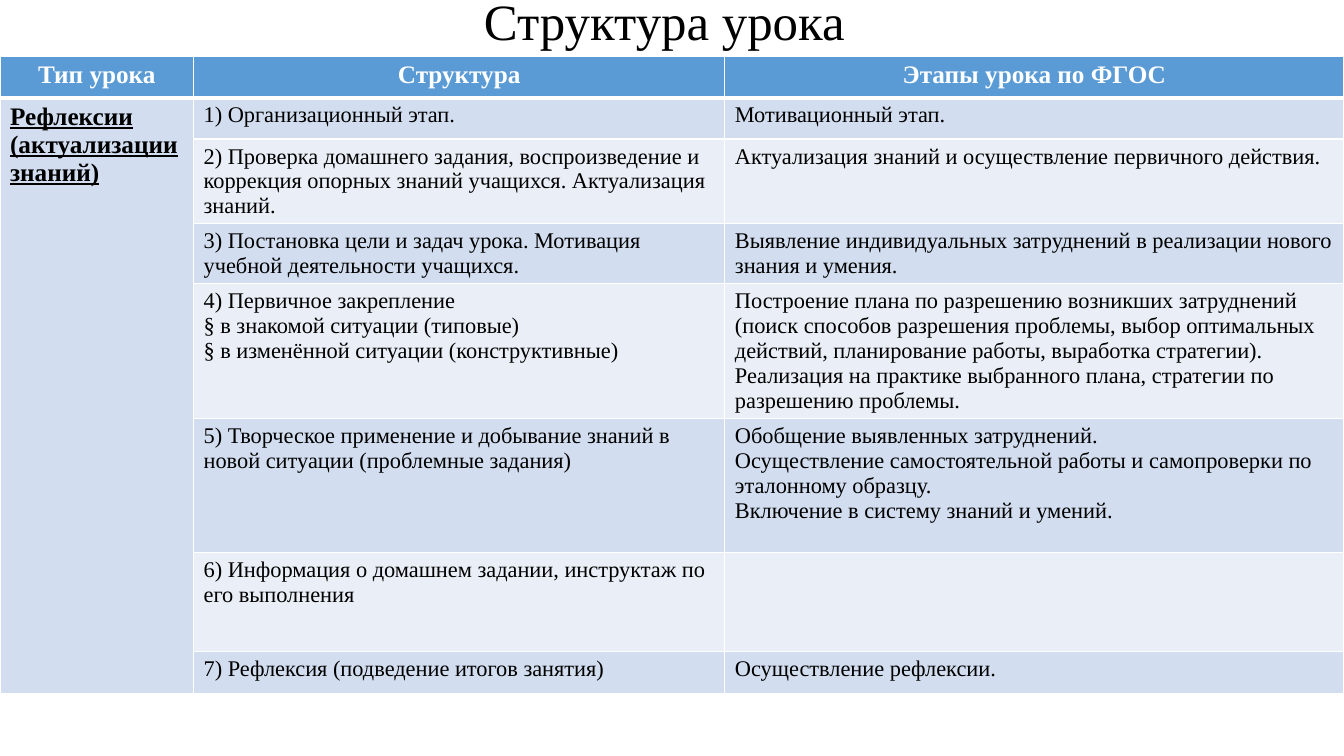
from dataclasses import dataclass

from lxml.etree import SubElement
from pptx import Presentation
from pptx.dml.color import RGBColor
from pptx.enum.text import MSO_ANCHOR as Anchor, PP_ALIGN as Align
from pptx.oxml.ns import qn
from pptx.util import Emu, Pt

PX = 9144  # 100 px to the inch


@dataclass(frozen=True)
class Theme:
    font: str = "Times New Roman"
    ink: str = "000000"
    paper: str = "FFFFFF"
    header: str = "5B9BD5"
    bands: tuple = ("D2DEEF", "EAEFF7")
    title_size: float = 36.3
    heading_size: int = 18
    body_size: int = 16
    rule: int = 1
    header_rule: int = 3


HEADINGS = ("Тип урока", "Структура", "Этапы урока по ФГОС")
LESSON_TYPE = "Рефлексии (актуализации знаний)"
STAGES = (
    ("1) Организационный этап.", "Мотивационный этап."),
    ("2) Проверка домашнего задания, воспроизведение и коррекция опорных "
     "знаний учащихся. Актуализация знаний.",
     "Актуализация знаний и осуществление первичного действия."),
    ("3) Постановка цели и задач урока. Мотивация учебной деятельности учащихся.",
     "Выявление индивидуальных затруднений в реализации нового знания и умения."),
    ("4) Первичное закрепление\n"
     "§ в знакомой ситуации (типовые)\n"
     "§ в изменённой ситуации (конструктивные)",
     "Построение плана по разрешению возникших затруднений (поиск способов "
     "разрешения проблемы, выбор оптимальных действий, планирование работы, "
     "выработка стратегии).\n"
     "Реализация на практике выбранного плана, стратегии по разрешению проблемы."),
    ("5) Творческое применение и добывание знаний в новой ситуации "
     "(проблемные задания)",
     "Обобщение выявленных затруднений.\n"
     "Осуществление самостоятельной работы и самопроверки по эталонному образцу.\n"
     "Включение в систему знаний и умений."),
    ("6) Информация о домашнем задании, инструктаж по его выполнения", ""),
    ("7) Рефлексия (подведение итогов занятия)", "Осуществление рефлексии."),
)
COLUMN_WIDTHS = (192, 527, 614)
ROW_HEIGHTS = (41, 41, 83, 59, 134, 133, 98, 42)


class SlideBuilder:
    def __init__(self, slide, theme):
        self.slide = slide
        self.theme = theme

    def set_text(self, frame, text, size, color, bold=False, underline=False,
                 align=Align.LEFT, spacing=None):
        frame.text = text
        for paragraph in frame.paragraphs:
            paragraph.alignment = align
            paragraph.line_spacing = spacing
            for run in paragraph.runs:
                font = run.font
                font.name, font.size = self.theme.font, Pt(size)
                font.bold, font.underline = bold, underline
                font.color.rgb = RGBColor.from_string(color)

    def title(self, text, left, top, width, height):
        box = self.slide.shapes.add_textbox(*(Emu(n * PX) for n in (left, top, width, height)))
        frame = box.text_frame
        frame.word_wrap = True
        frame.vertical_anchor = Anchor.MIDDLE
        self.set_text(frame, text, self.theme.title_size, self.theme.ink,
                      align=Align.CENTER, spacing=0.7)

    def table(self, left, top, widths, heights):
        bounds = (left, top, sum(widths), sum(heights))
        grid = self.slide.shapes.add_table(
            len(heights), len(widths), *(Emu(n * PX) for n in bounds)).table
        for column, width in zip(grid.columns, widths):
            column.width = Emu(width * PX)
        for row, height in zip(grid.rows, heights):
            row.height = Emu(height * PX)
        return grid

    def paint(self, cell, fill, top_rule, bottom_rule):
        """Draw the four borders, then the fill that must follow them in the XML."""
        theme = self.theme
        properties = cell._tc.get_or_add_tcPr()
        for side, points in zip("LRTB", (theme.rule, theme.rule, top_rule, bottom_rule)):
            line = SubElement(properties, qn(f"a:ln{side}"), w=str(Pt(points)))
            solid = SubElement(line, qn("a:solidFill"))
            SubElement(solid, qn("a:srgbClr"), val=theme.paper)
        cell.fill.solid()
        cell.fill.fore_color.rgb = RGBColor.from_string(fill)

    def lesson_table(self, left, top):
        theme = self.theme
        grid = self.table(left, top, COLUMN_WIDTHS, ROW_HEIGHTS)
        for column, heading in enumerate(HEADINGS):
            cell = grid.cell(0, column)
            self.paint(cell, theme.header, theme.rule, theme.header_rule)
            self.set_text(cell.text_frame, heading, theme.heading_size, theme.paper,
                          bold=True, align=Align.CENTER)

        for row, stage in enumerate(STAGES, start=1):
            band = theme.bands[(row - 1) % 2]
            top_rule = theme.header_rule if row == 1 else theme.rule
            for column, fill in enumerate((theme.bands[0], band, band)):
                self.paint(grid.cell(row, column), fill, top_rule, theme.rule)
            for column, text in enumerate(stage, start=1):
                self.set_text(grid.cell(row, column).text_frame, text,
                              theme.body_size, theme.ink)

        lesson_type = grid.cell(1, 0)
        lesson_type.merge(grid.cell(len(STAGES), 0))
        self.set_text(lesson_type.text_frame, LESSON_TYPE, theme.heading_size, theme.ink,
                      bold=True, underline=True)


def main():
    deck = Presentation()
    deck.slide_width, deck.slide_height = Emu(1333 * PX), Emu(750 * PX)
    builder = SlideBuilder(deck.slides.add_slide(deck.slide_layouts[6]), Theme())
    builder.lesson_table(0, 56)
    builder.title("Структура урока", 84, 0, 1150, 56)
    deck.save("out.pptx")


if __name__ == "__main__":
    main()
